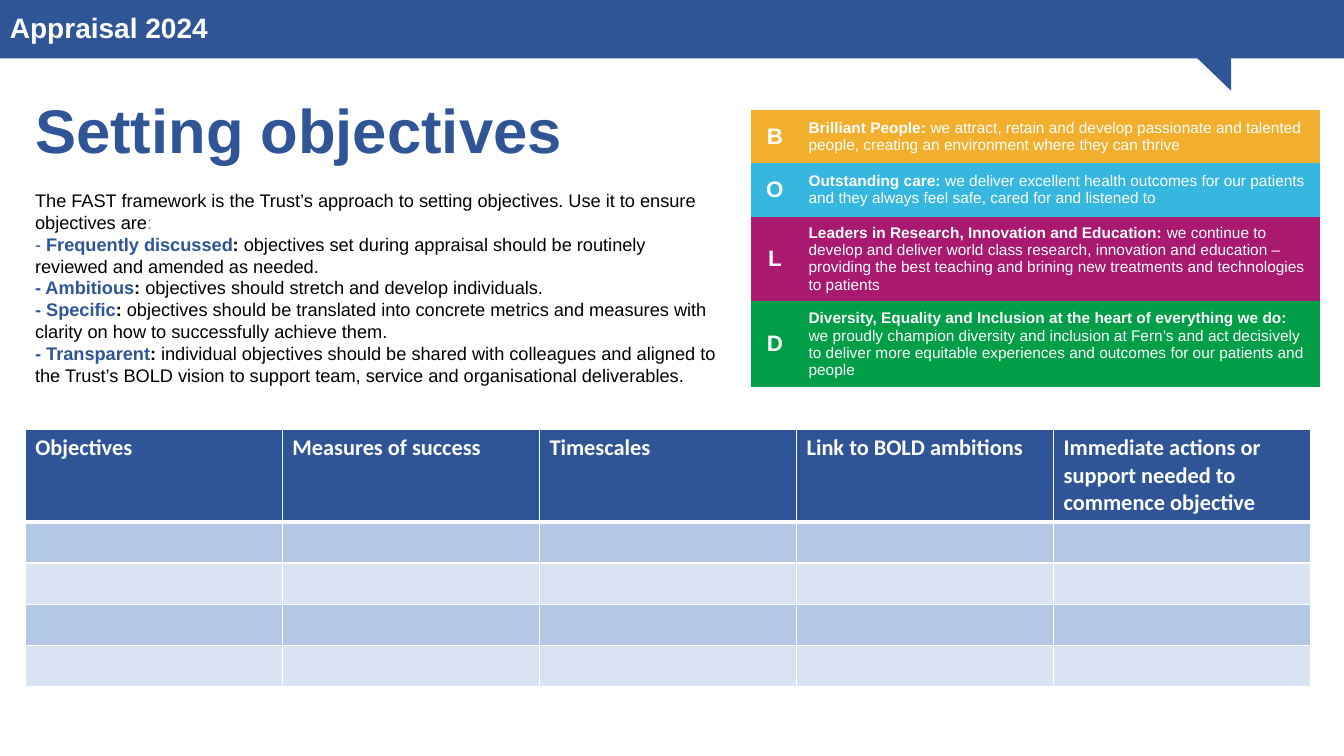
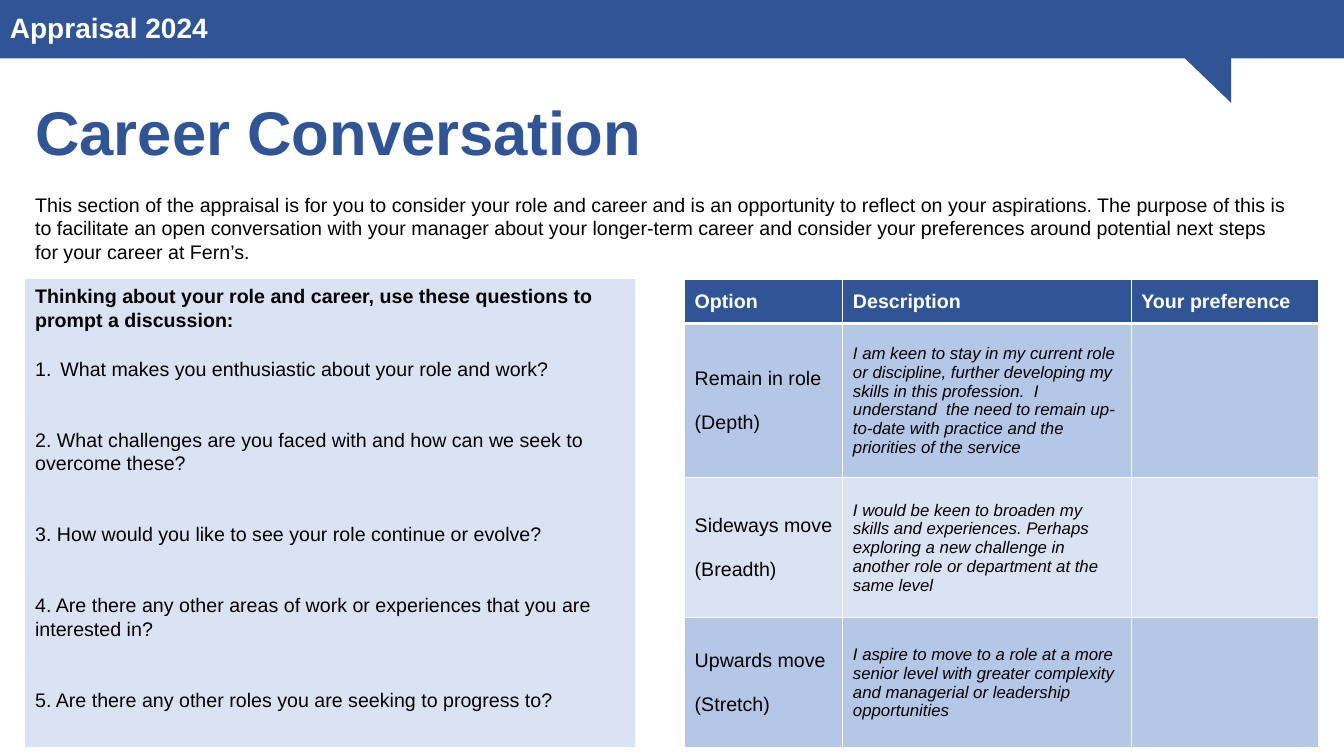
from pptx import Presentation
from pptx.dml.color import RGBColor
from pptx.enum.shapes import MSO_SHAPE as Shape
from pptx.enum.text import MSO_ANCHOR as Anchor, PP_ALIGN as Align
from pptx.oxml.ns import qn
from pptx.util import Inches, Pt
from lxml.etree import SubElement

BLUE = RGBColor(0x2F, 0x55, 0x97)
MID = RGBColor(0xB4, 0xC7, 0xE7)
PALE = RGBColor(0xDA, 0xE3, 0xF3)
WHITE = RGBColor(0xFF, 0xFF, 0xFF)
BLACK = RGBColor(0, 0, 0)
TAN = RGBColor(0xD3, 0x8A, 0x59)
GOLD = RGBColor(0xF2, 0xAF, 0x2D)
SKY = RGBColor(0x35, 0xB7, 0xE0)
PLUM = RGBColor(0xAA, 0x19, 0x70)
GREEN = RGBColor(0x00, 0x9E, 0x47)
FONT = "Arial"
PLAIN = "{2D5ABB26-0587-4C30-8999-92F81FD0307C}"

FAST = [
    ("- ", False, "Frequently discussed",
     "objectives set during appraisal should be routinely reviewed and amended as needed."),
    ("- ", True, "Ambitious", "objectives should stretch and develop individuals."),
    ("- ", True, "Specific",
     "objectives should be translated into concrete metrics and measures with clarity "
     "on how to successfully achieve them."),
    ("- ", True, "Transparent",
     "individual objectives should be shared with colleagues and aligned to the Trust’s "
     "BOLD vision to support team, service and organisational deliverables."),
]
BOLD = [
    ("B", GOLD, "Brilliant People: ",
     "we attract, retain and develop passionate and talented people, creating an "
     "environment where they can thrive"),
    ("O", SKY, "Outstanding care: ",
     "we deliver excellent health outcomes for our patients and they always feel safe, "
     "cared for and listened to"),
    ("L", PLUM, "Leaders in Research, Innovation and Education: ",
     "we continue to develop and deliver world class research, innovation and education – "
     "providing the best teaching and brining new treatments and technologies to patients"),
    ("D", GREEN, "Diversity, Equality and Inclusion at the heart of everything we do: ",
     "we proudly champion diversity and inclusion at Fern’s and act decisively to deliver "
     "more equitable experiences and outcomes for our patients and people"),
]
GOALS = ["Objectives", "Measures of success", "Timescales", "Link to BOLD ambitions",
         "Immediate actions or support needed to commence objective"]
INTRO = ("This section of the appraisal is for you to consider your role and career and is an "
         "opportunity to reflect on your aspirations. The purpose of this is to facilitate an "
         "open conversation with your manager about your longer-term career and consider your "
         "preferences around potential next steps for your career at Fern’s.")
PROMPT = "Thinking about your role and career, use these questions to prompt a discussion:"
ASKS = [
    "What makes you enthusiastic about your role and work?",
    "2. What challenges are you faced with and how can we seek to overcome these?",
    "3. How would you like to see your role continue or evolve?",
    "4. Are there any other areas of work or experiences that you are interested in?",
    "5. Are there any other roles you are seeking to progress to?",
]
MOVES = [
    (["Remain in role", "(Depth)"],
     "I am keen to stay in my current role or discipline, further developing my skills in this "
     "profession.  I understand  the need to remain up-to-date with practice and the "
     "priorities of the service"),
    (["Sideways move", "(Breadth)"],
     "I would be keen to broaden my skills and experiences. Perhaps exploring a new challenge "
     "in another role or department at the same level"),
    (["Upwards move", "(Stretch)"],
     "I aspire to move to a role at a more senior level with greater complexity and managerial "
     "or leadership opportunities"),
]


def style(run, size, color=BLACK, bold=False, italic=False, face=FONT):
    font = run.font
    font.size, font.name = Pt(size), face
    font.bold, font.italic = bold, italic
    font.color.rgb = color


def write(frame, lines, size, gap=0, **look):
    frame.text = "\n".join(lines)
    for row, par in enumerate(frame.paragraphs):
        par.alignment = Align.LEFT
        par.space_before = Pt(gap if row else 0)
        for run in par.runs:
            style(run, size, **look)


def mix(par, parts, size):
    for text, color, bold in parts:
        run = par.add_run()
        run.text = text
        style(run, size, color, bold)


def block(slide, kind, box, color):
    shape = slide.shapes.add_shape(kind, *map(Inches, box))
    shape.shadow.inherit = False
    shape.fill.solid()
    shape.fill.fore_color.rgb = color
    shape.line.fill.background()
    return shape


def start(deck, notch):
    slide = deck.slides.add_slide(deck.slide_layouts[6])
    band = block(slide, Shape.RECTANGLE, (0, 0, 13.33, 0.58), BLUE)
    band.text_frame.vertical_anchor = Anchor.MIDDLE
    write(band.text_frame, ["Appraisal 2024"], 20, color=WHITE, bold=True)
    band.text_frame.paragraphs[0].line_spacing = 0.9
    tail = block(slide, Shape.RIGHT_TRIANGLE, (11.66, notch, 0.55, 0.53), BLUE)
    tail.rotation = 180
    return slide


def story(slide, box, title, gap):
    frame = slide.shapes.add_textbox(*map(Inches, box)).text_frame
    frame.word_wrap = True
    write(frame, [title], 44, color=BLUE, bold=True)
    par = frame.add_paragraph()
    par.space_before = Pt(gap)
    return frame, par


def paint(cell, color, anchor=Anchor.MIDDLE):
    cell.fill.solid()
    cell.fill.fore_color.rgb = color
    cell.vertical_anchor = anchor


def edge(cell, foot):
    props = cell._tc.get_or_add_tcPr()
    for spot, (side, width) in enumerate(zip("LRTB", (1, 1, 1, foot))):
        line = props.makeelement(qn(f"a:ln{side}"), {"w": str(Pt(width))})
        fill = SubElement(line, qn("a:solidFill"))
        SubElement(fill, qn("a:srgbClr"), val=str(WHITE))
        props.insert(spot, line)


def grid(slide, left, top, cols, rows):
    frame = slide.shapes.add_table(len(rows), len(cols), Inches(left), Inches(top),
                                   Inches(sum(cols)), Inches(sum(rows)))
    for mark in frame._element.iter(qn("a:tableStyleId")):
        mark.text = PLAIN
    table = frame.table
    for col, width in zip(table.columns, cols):
        col.width = Inches(width)
    for row, high in zip(table.rows, rows):
        row.height = Inches(high)
    return table


def form(slide, left, top, cols, rows, heads, size, face, anchor):
    table = grid(slide, left, top, cols, rows)
    for row in range(len(rows)):
        for col, head in enumerate(heads):
            cell = table.cell(row, col)
            if row == 0:
                paint(cell, BLUE, anchor)
                write(cell.text_frame, [head], size, color=WHITE, bold=True, face=face)
            else:
                paint(cell, MID if row % 2 else PALE)
            edge(cell, 1 if row else 3)
    return table


def values(slide):
    table = grid(slide, 7.45, 1.09, [0.47, 5.17], [0.53, 0.53, 0.84, 0.85])
    for row, (mark, color, name, text) in enumerate(BOLD):
        key, note = table.cell(row, 0), table.cell(row, 1)
        paint(key, color)
        paint(note, color)
        write(key.text_frame, [mark], 16, color=WHITE, bold=True)
        key.text_frame.paragraphs[0].alignment = Align.CENTER
        mix(note.text_frame.paragraphs[0], [(name, WHITE, True), (text, WHITE, False)], 11)


def targets(deck):
    slide = start(deck, 0.37)
    form(slide, 0.25, 4.26, [2.55] * 5, [0.91] + [0.41] * 4, GOALS, 16, "Calibri", Anchor.TOP)
    frame, par = story(slide, (0.25, 0.86, 7, 3.03), "Setting objectives", 17)
    mix(par, [("The FAST framework is the Trust’s approach to setting objectives. "
               "Use it to ensure objectives are", BLACK, False), (":", TAN, False)], 13)
    for dash, heavy, name, text in FAST:
        mix(frame.add_paragraph(), [(dash, BLUE, heavy), (name, BLUE, True),
                                    (": ", BLACK, True), (text, BLACK, False)], 13)
    values(slide)


def prompts(slide):
    box = block(slide, Shape.RECTANGLE, (0.25, 2.77, 6.05, 4.64), PALE)
    frame = box.text_frame
    frame.vertical_anchor = Anchor.TOP
    write(frame, [PROMPT] + ASKS, 14, gap=34)
    head, first = frame.paragraphs[:2]
    head.runs[0].font.bold = True
    first.space_before = Pt(18)
    props = first._p.get_or_add_pPr()
    props.set("marL", str(Inches(0.25)))
    props.set("indent", str(Inches(-0.25)))
    SubElement(props, qn("a:buFont"), typeface="+mj-lt")
    SubElement(props, qn("a:buAutoNum"), type="arabicPeriod")


def career(deck):
    slide = start(deck, 0.49)
    table = form(slide, 6.79, 2.77, [1.57, 2.86, 1.86], [0.44, 1.53, 1.39, 1.29],
                 ["Option", "Description", "Your preference"], 14, FONT, Anchor.MIDDLE)
    for row, (name, text) in enumerate(MOVES, 1):
        write(table.cell(row, 0).text_frame, name, 14, gap=16)
        write(table.cell(row, 1).text_frame, [text], 12, italic=True)
    par = story(slide, (0.25, 0.88, 12.68, 1.78), "Career Conversation", 18)[1]
    mix(par, [(INTRO, BLACK, False)], 14)
    prompts(slide)


def main():
    deck = Presentation()
    deck.slide_width, deck.slide_height = Inches(13.33), Inches(7.5)
    targets(deck)
    career(deck)
    deck.save("out.pptx")


if __name__ == "__main__":
    main()
